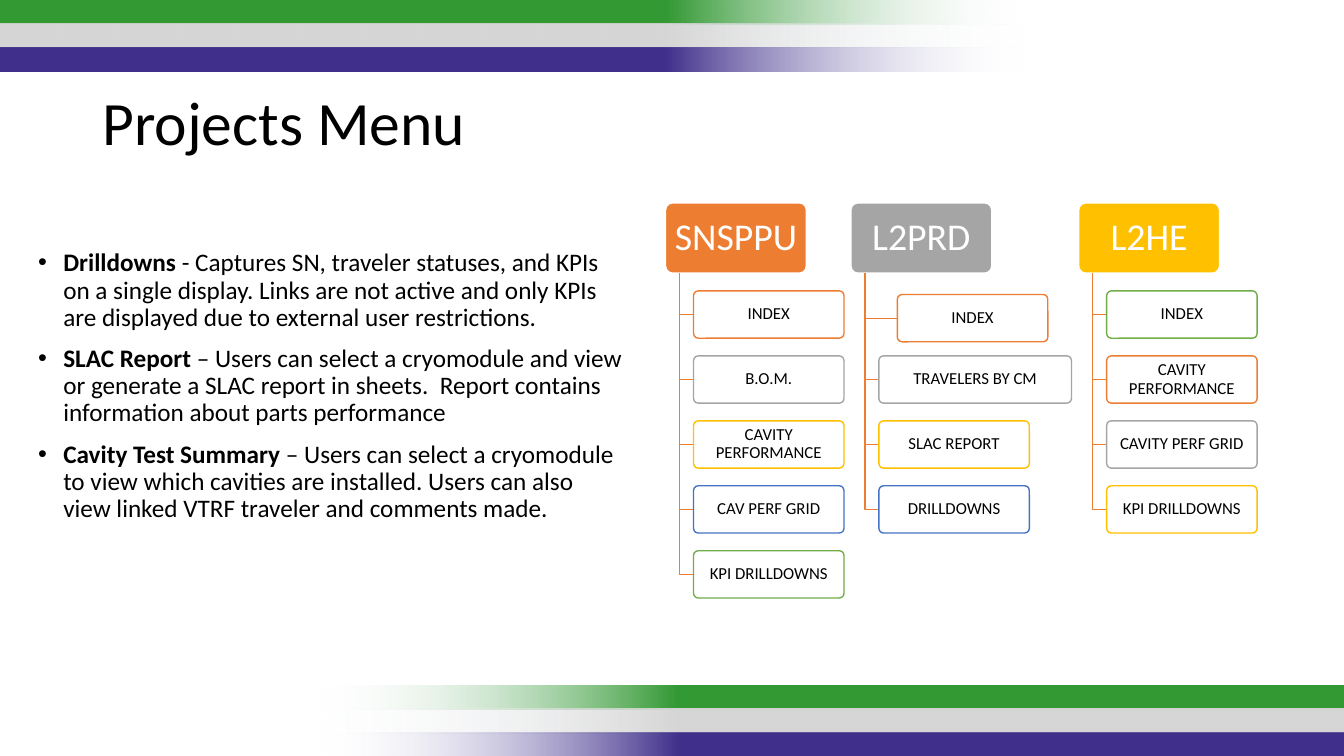
import dataclasses

import lxml.etree
import pptx
import pptx.dml.color
import pptx.enum.shapes
import pptx.enum.text
import pptx.oxml
import pptx.oxml.ns
import pptx.util

Pt = pptx.util.Pt
qn = pptx.oxml.ns.qn
RECTANGLE = pptx.enum.shapes.MSO_SHAPE.RECTANGLE
ROUNDED = pptx.enum.shapes.MSO_SHAPE.ROUNDED_RECTANGLE
ALIGN = pptx.enum.text.PP_ALIGN
ANCHOR = pptx.enum.text.MSO_ANCHOR

FONT = "Calibri"
BLACK, WHITE = "000000", "FFFFFF"
ORANGE, GRAY, GOLD, BLUE, GREEN = "ED7D31", "A5A5A5", "FFC000", "4472C4", "70AD47"

BAND_COLORS = ["339933", "D6D6D6", "42318C"]
BAND_WIDTH, BAND_HEIGHT, BAND_PITCH = 732, 17.2, 17

HEADER_TOP, HEADER_WIDTH, HEADER_HEIGHT = 144.9, 100.6, 50.2
ITEM_TOP, ITEM_WIDTH, ITEM_HEIGHT, ITEM_PITCH = 207.8, 107.5, 33.8, 46.4
TRUNK_INDENT, ITEM_INDENT = 10, 20


@dataclasses.dataclass
class Item:
    label: str
    color: str
    width: float = ITEM_WIDTH
    shift_x: float = 0
    shift_y: float = 0


@dataclasses.dataclass
class Project:
    name: str
    color: str
    left: float
    items: list[Item]


PROJECTS = [
    Project("SNSPPU", ORANGE, 475.4, [
        Item("INDEX", ORANGE),
        Item("B.O.M.", GRAY),
        Item("CAVITY PERFORMANCE", GOLD),
        Item("CAV PERF GRID", BLUE),
        Item("KPI DRILLDOWNS", GREEN),
    ]),
    Project("L2PRD", GRAY, 607.8, [
        Item("INDEX", ORANGE, shift_x=13.2, shift_y=2.6),
        Item("TRAVELERS BY CM", GRAY, width=137.6),
        Item("SLAC REPORT", GOLD),
        Item("DRILLDOWNS", BLUE),
    ]),
    Project("L2HE", GOLD, 770.5, [
        Item("INDEX", GREEN),
        Item("CAVITY PERFORMANCE", ORANGE),
        Item("CAVITY PERF GRID", GRAY),
        Item("KPI DRILLDOWNS", GOLD),
    ]),
]

FEATURES = [
    ("Drilldowns", " - Captures SN, traveler statuses, and KPIs on a single display. "
     "Links are not active and only KPIs are displayed due to external user restrictions."),
    ("SLAC Report ", "– Users can select a cryomodule and view or generate a SLAC report "
     "in sheets.  Report contains information about parts performance"),
    ("Cavity Test Summary ", "– Users can select a cryomodule to view which cavities are "
     "installed. Users can also view linked VTRF traveler and comments made."),
]


def rgb(color: str) -> pptx.dml.color.RGBColor:
    return pptx.dml.color.RGBColor.from_string(color)


def write(paragraph, text: str, *, size: float, color: str = BLACK,
          bold: bool = False, align=ALIGN.LEFT) -> None:
    """Append a formatted run to the paragraph."""
    paragraph.alignment = align
    paragraph.line_spacing = 0.9
    run = paragraph.add_run()
    run.text = text
    run.font.name = FONT
    run.font.size = Pt(size)
    run.font.bold = bold
    run.font.color.rgb = rgb(color)


def place(placeholder, left: float, top: float, width: float, height: float):
    """Move a placeholder and return its top-anchored text frame."""
    placeholder.left, placeholder.top = Pt(left), Pt(top)
    placeholder.width, placeholder.height = Pt(width), Pt(height)
    frame = placeholder.text_frame
    frame.auto_size = pptx.enum.text.MSO_AUTO_SIZE.NONE
    frame.vertical_anchor = ANCHOR.TOP
    return frame


def add_bullet(paragraph) -> None:
    properties = paragraph._p.get_or_add_pPr()
    properties.set("marL", str(Pt(18)))
    properties.set("indent", str(Pt(-18)))
    lxml.etree.SubElement(properties, qn("a:buFont")).set("typeface", "Arial")
    lxml.etree.SubElement(properties, qn("a:buChar")).set("char", "•")


def add_band(slide, left: float, top: float, color: str, rotation: float) -> None:
    """Draw a stripe that fades out at its start."""
    band = slide.shapes.add_shape(RECTANGLE, Pt(left), Pt(top), Pt(BAND_WIDTH), Pt(BAND_HEIGHT))
    band.rotation = rotation
    band.shadow.inherit = False
    band.line.fill.background()
    band.fill.gradient()
    band.fill.gradient_angle = 0
    stops = band._element.spPr.find(qn("a:gradFill")).find(qn("a:gsLst"))
    for stop in list(stops):
        stops.remove(stop)
    for percent, stop_color, alpha in [(0, "F7FAFD", 0), (35, color, 100), (100, color, 100)]:
        stop = lxml.etree.SubElement(stops, qn("a:gs"), pos=str(percent * 1000))
        tint = lxml.etree.SubElement(stop, qn("a:srgbClr"), val=stop_color)
        lxml.etree.SubElement(tint, qn("a:alpha"), val=str(alpha * 1000))


def add_box(slide, label: str, left: float, top: float, width: float, height: float, *,
            fill: str, line: str, size: float, color: str,
            inset_x: float, inset_y: float) -> None:
    box = slide.shapes.add_shape(ROUNDED, Pt(left), Pt(top), Pt(width), Pt(height))
    box.adjustments[0] = 0.1
    box.shadow.inherit = False
    box.fill.solid()
    box.fill.fore_color.rgb = rgb(fill)
    box.line.color.rgb = rgb(line)
    box.line.width = Pt(1)
    frame = box.text_frame
    frame.word_wrap = True
    frame.vertical_anchor = ANCHOR.MIDDLE
    frame.margin_left = frame.margin_right = Pt(inset_x)
    frame.margin_top = frame.margin_bottom = Pt(inset_y)
    write(frame.paragraphs[0], label, size=size, color=color, align=ALIGN.CENTER)


def add_branch(slide, trunk: float, top: float, right: float, bottom: float) -> None:
    """Draw an L-shaped line from a header down and across to an item."""
    builder = slide.shapes.build_freeform(Pt(trunk), Pt(top))
    builder.add_line_segments([(Pt(trunk), Pt(bottom)), (Pt(right), Pt(bottom))], close=False)
    branch = builder.convert_to_shape()
    branch.shadow.inherit = False
    branch.fill.background()
    branch.line.color.rgb = rgb(ORANGE)
    branch.line.width = Pt(1)


def add_project(slide, project: Project) -> None:
    add_box(slide, project.name, project.left, HEADER_TOP, HEADER_WIDTH, HEADER_HEIGHT,
            fill=project.color, line=WHITE, size=27, color=WHITE, inset_x=4, inset_y=2.7)
    for row, item in enumerate(project.items):
        left = project.left + ITEM_INDENT + item.shift_x
        top = ITEM_TOP + row * ITEM_PITCH + item.shift_y
        add_branch(slide, project.left + TRUNK_INDENT, HEADER_TOP + HEADER_HEIGHT,
                   left, top + ITEM_HEIGHT / 2)
        add_box(slide, item.label, left, top, item.width, ITEM_HEIGHT,
                fill=WHITE, line=item.color, size=12, color=BLACK, inset_x=1.8, inset_y=1.2)


def main() -> None:
    presentation = pptx.Presentation()
    presentation.slide_width, presentation.slide_height = Pt(960), Pt(540)
    slide = presentation.slides.add_slide(presentation.slide_layouts[1])

    for row, color in enumerate(BAND_COLORS):
        add_band(slide, -1, row * BAND_PITCH, color, 180)
        add_band(slide, 228.6, 489.4 + row * BAND_PITCH, color, 0)

    title = place(slide.shapes.title, 66, 62, 828, 71.3)
    write(title.paragraphs[0], "Projects Menu", size=44)

    features = place(slide.placeholders[1], 20, 175, 431.5, 252.7)
    for index, (name, description) in enumerate(FEATURES):
        paragraph = features.add_paragraph() if index else features.paragraphs[0]
        add_bullet(paragraph)
        paragraph.space_before = Pt(10 if index else 0)
        write(paragraph, name, size=18, bold=True)
        write(paragraph, description, size=18)

    for project in PROJECTS:
        add_project(slide, project)

    presentation.save("out.pptx")


if __name__ == "__main__":
    main()
